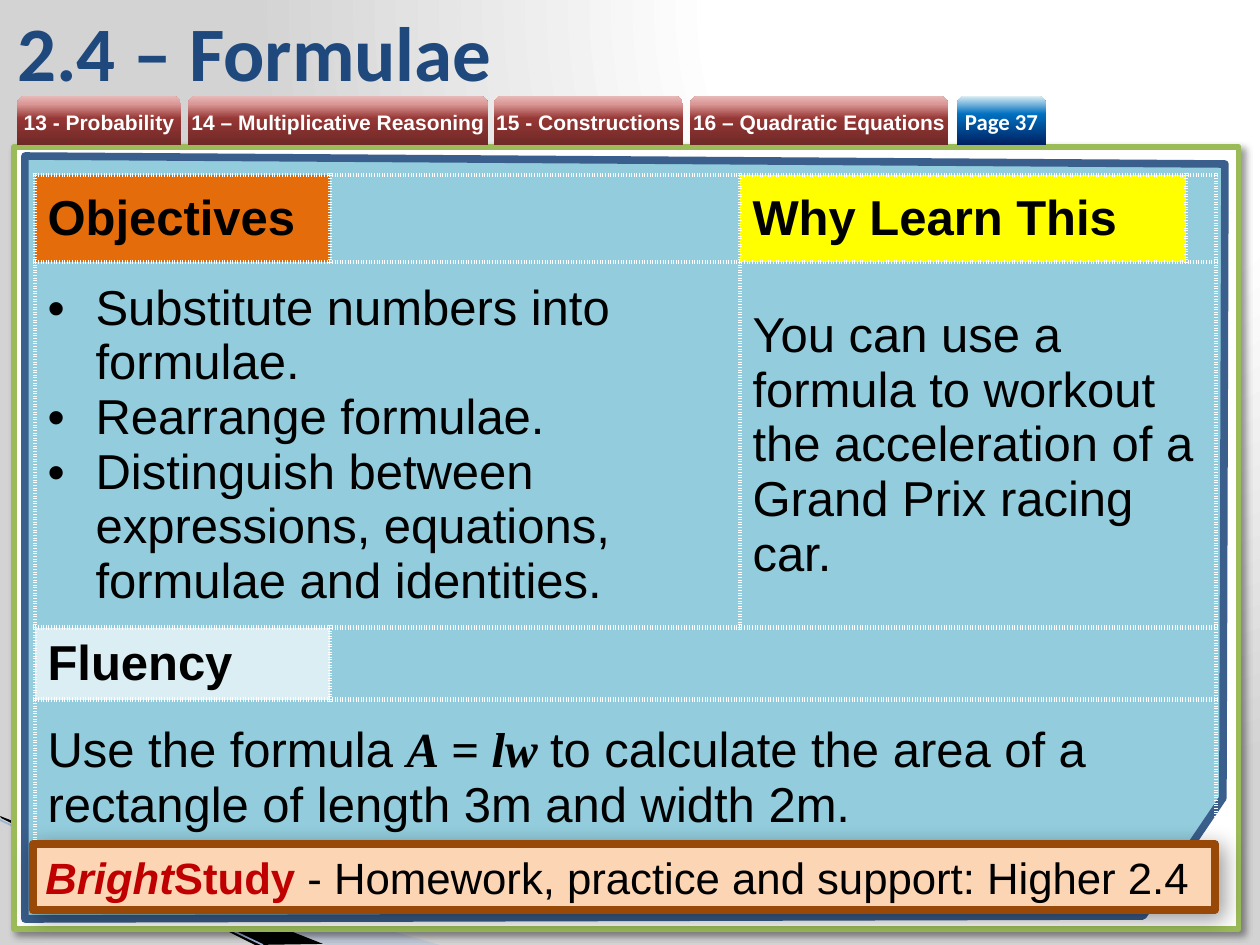
from dataclasses import dataclass

from lxml.etree import SubElement
from pptx import Presentation
from pptx.dml.color import RGBColor
from pptx.enum.shapes import MSO_CONNECTOR, MSO_SHAPE
from pptx.enum.text import MSO_ANCHOR, PP_ALIGN
from pptx.oxml.ns import qn
from pptx.util import Emu, Pt

EMU_PER_PX = 914400 / 126
COLORS = {
    "white": "FFFFFF", "black": "000000", "grey": "D3D3D3", "navy": "1F497D",
    "swoosh": "A7B9DB", "swoosh_line": "9EB3D6", "frame": "9BBB59",
    "panel": "93CDDD", "panel_line": "3A5F8C", "objectives": "E46C0A",
    "why": "FFFF00", "fluency": "DBEEF4", "bar": "FCD5B5",
    "bar_line": "984807", "red": "C00000",
}
RED_STOPS = [(0, "6F2927"), (54, "953735"), (83, "D99694"), (100, "E6B9B8")]
BLUE_STOPS = [(0, "002060"), (63, "0070C0"), (100, "DBEEF4")]
BACKGROUND_STOPS = [(0, "FFFFFF"), (40, "FFFFFF"), (100, "D3D3D3")]


@dataclass
class Run:
    text: str
    size: int = 28
    font: str = "Arial"
    color: str = "black"
    bold: bool = False
    italic: bool = False


@dataclass
class Tab:
    label: Run
    left: int
    width: int
    stops: list


@dataclass
class Entry:
    row: int
    col: int
    paragraphs: list
    fill: str = ""
    bulleted: bool = False


def px(value):
    return Emu(round(value * EMU_PER_PX))


def box(left, top, width, height):
    return px(left), px(top), px(width), px(height)


def rgb(name):
    return RGBColor.from_string(COLORS[name])


def add_color(parent, value, alpha=100):
    color = SubElement(parent, qn("a:srgbClr"), val=value)
    if alpha < 100:
        SubElement(color, qn("a:alpha"), val=str(alpha * 1000))


def fill_stops(owner, stops):
    """Replace the stops of the owner's gradient and return the gradient."""
    gradient = owner.find(".//" + qn("a:gradFill"))
    del gradient[:]
    stop_list = SubElement(gradient, qn("a:gsLst"))
    for position, value in stops:
        add_color(SubElement(stop_list, qn("a:gs"), pos=str(position * 1000)), value)
    return gradient


def add_runs(paragraph, runs):
    for item in runs:
        run = paragraph.add_run()
        run.text = item.text
        run.font.size, run.font.name = Pt(item.size), item.font
        run.font.bold, run.font.italic = item.bold, item.italic
        run.font.color.rgb = rgb(item.color)


def paint(shape, fill, line="", weight=0.0):
    shape.shadow.inherit = False
    shape.fill.solid()
    shape.fill.fore_color.rgb = rgb(fill)
    if line:
        shape.line.color.rgb = rgb(line)
        shape.line.width = Pt(weight)
    else:
        shape.line.fill.background()


def cast_shadow(shape, blur):
    effects = shape._element.spPr.find(qn("a:effectLst"))
    shadow = SubElement(effects, qn("a:outerShdw"), blurRad=str(Pt(blur)),
                        dist=str(Pt(3)), dir="2700000", algn="tl", rotWithShape="0")
    add_color(shadow, COLORS["black"], 40)


def add_polygon(slide, points, fill, line="", weight=0.0):
    builder = slide.shapes.build_freeform(*points[0], scale=EMU_PER_PX)
    builder.add_line_segments(points[1:], close=True)
    polygon = builder.convert_to_shape()
    paint(polygon, fill, line, weight)
    return polygon


def add_tab(slide, tab: Tab):
    shape = slide.shapes.add_shape(MSO_SHAPE.ROUND_2_SAME_RECTANGLE,
                                   *box(tab.left, 96, tab.width, 49))
    shape.shadow.inherit = False
    shape.line.fill.background()
    shape.fill.gradient()
    SubElement(fill_stops(shape._element, tab.stops), qn("a:lin"), ang="16200000", scaled="0")
    frame = shape.text_frame
    frame.margin_left = frame.margin_right = frame.margin_top = frame.margin_bottom = 0
    frame.vertical_anchor = MSO_ANCHOR.MIDDLE
    frame.word_wrap = False
    frame.paragraphs[0].alignment = PP_ALIGN.CENTER
    add_runs(frame.paragraphs[0], [tab.label])


def add_borders(cell):
    properties = cell._tc.get_or_add_tcPr()
    for index, side in enumerate(("lnL", "lnR", "lnT", "lnB")):
        border = SubElement(properties, qn("a:" + side), w=str(Pt(3)))
        add_color(SubElement(border, qn("a:solidFill")), COLORS["white"])
        SubElement(border, qn("a:prstDash"), val="sysDot")
        properties.insert(index, border)


def add_bullet(paragraph):
    properties = paragraph._p.get_or_add_pPr()
    properties.set("marL", str(px(48)))
    properties.set("indent", str(-px(48)))
    SubElement(properties, qn("a:buFont"), typeface="Arial")
    SubElement(properties, qn("a:buChar"), char="•")


def add_lesson_table(slide, entries):
    widths, heights = (295, 410, 446, 30), (87, 340, 72, 157)
    table = slide.shapes.add_table(len(heights), len(widths),
                                   *box(35, 175, sum(widths), sum(heights))).table
    table.first_row = table.horz_banding = False
    for column, width in zip(table.columns, widths):
        column.width = px(width)
    for row, height in zip(table.rows, heights):
        row.height = px(height)
    for cell in table.iter_cells():
        cell.fill.background()
        cell.vertical_anchor = MSO_ANCHOR.MIDDLE
        add_borders(cell)
    # Merged areas: row, first column, last column
    for row, first, last in ((1, 0, 1), (1, 2, 3), (2, 1, 3), (3, 0, 3)):
        table.cell(row, first).merge(table.cell(row, last))
    for entry in entries:
        cell = table.cell(entry.row, entry.col)
        if entry.fill:
            cell.fill.solid()
            cell.fill.fore_color.rgb = rgb(entry.fill)
        for index, runs in enumerate(entry.paragraphs):
            frame = cell.text_frame
            paragraph = frame.add_paragraph() if index else frame.paragraphs[0]
            if entry.bulleted:
                add_bullet(paragraph)
            add_runs(paragraph, runs)


def main():
    prs = Presentation()
    prs.slide_width, prs.slide_height = px(1260), px(945)
    slide = prs.slides.add_slide(prs.slide_layouts[6])

    # Background and corner swoosh
    slide.background.fill.gradient()
    glow = SubElement(fill_stops(slide._element, BACKGROUND_STOPS), qn("a:path"), path="circle")
    SubElement(glow, qn("a:fillToRect"), l="65000", t="0", r="0", b="98000")
    swoosh = add_polygon(slide, [(0, 818), (440, 945), (326, 945)], "swoosh")
    tint = swoosh._element.spPr.find(qn("a:solidFill"))[0]
    SubElement(tint, qn("a:alpha"), val="40000")
    add_polygon(slide, [(0, 816), (323, 944), (255, 945), (1, 818)], "black")
    edge = slide.shapes.add_connector(MSO_CONNECTOR.STRAIGHT, px(0), px(820), px(263), px(945))
    edge.line.color.rgb = rgb("swoosh_line")
    edge.line.width = Pt(0.95)
    SubElement(edge._element.spPr, qn("a:effectLst"))

    # Frame, chapter tabs and panel
    frame = slide.shapes.add_shape(MSO_SHAPE.RECTANGLE, *box(14, 147, 1225, 782))
    paint(frame, "white", "frame", 3)
    cast_shadow(frame, 4)
    chapters = [("13 - Probability", 17, 164), ("14 – Multiplicative Reasoning", 188, 300),
                ("15 - Constructions", 494, 189), ("16 – Quadratic Equations", 690, 258)]
    for label, left, width in chapters:
        add_tab(slide, Tab(Run(label, 12, color="white", bold=True), left, width, RED_STOPS))
    panel = [(25, 156), (1225, 164), (1223, 798), (1143, 916), (25, 919)]
    add_polygon(slide, panel, "panel", "panel_line", 4.33)

    # Title and page tab
    title = slide.shapes.add_textbox(*box(5, 6, 1042, 89)).text_frame
    title.word_wrap = True
    title.vertical_anchor = MSO_ANCHOR.MIDDLE
    add_runs(title.paragraphs[0], [Run("2.4 – Formulae", 44, "Calibri", "navy", True)])
    add_tab(slide, Tab(Run("Page 37", 13, "Calibri", "white", True), 957, 89, BLUE_STOPS))

    # Lesson table
    objectives = ["Substitute numbers into formulae.", "Rearrange formulae.",
                  "Distinguish between expressions, equations, formulae and identities."]
    why = "You can use a formula to workout the acceleration of a Grand Prix racing car."
    symbol = {"font": "Times New Roman", "bold": True}
    task = [Run("Use the formula "), Run("A", italic=True, **symbol), Run(" = ", **symbol),
            Run("lw ", italic=True, **symbol),
            Run("to calculate the area of a rectangle of length 3m and width 2m.")]
    add_lesson_table(slide, [
        Entry(0, 0, [[Run("Objectives", bold=True)]], "objectives"),
        Entry(0, 2, [[Run("Why Learn This", bold=True)]], "why"),
        Entry(1, 0, [[Run(text)] for text in objectives], bulleted=True),
        Entry(1, 2, [[Run(why)]]),
        Entry(2, 0, [[Run("Fluency", bold=True)]], "fluency"),
        Entry(3, 0, [task]),
    ])

    # Homework bar
    bar = slide.shapes.add_shape(MSO_SHAPE.RECTANGLE, *box(33, 844, 1182, 66))
    paint(bar, "bar", "bar_line", 4.33)
    cast_shadow(bar, 13)
    bar.text_frame.word_wrap = True
    bar.text_frame.vertical_anchor = MSO_ANCHOR.MIDDLE
    homework = bar.text_frame.paragraphs[0]
    homework.alignment = PP_ALIGN.LEFT
    add_runs(homework, [Run("Bright", 25, color="red", bold=True, italic=True),
                        Run("Study ", 25, color="red", bold=True),
                        Run("- Homework, practice and support: Higher 2.4", 25)])
    prs.save("out.pptx")


if __name__ == "__main__":
    main()
